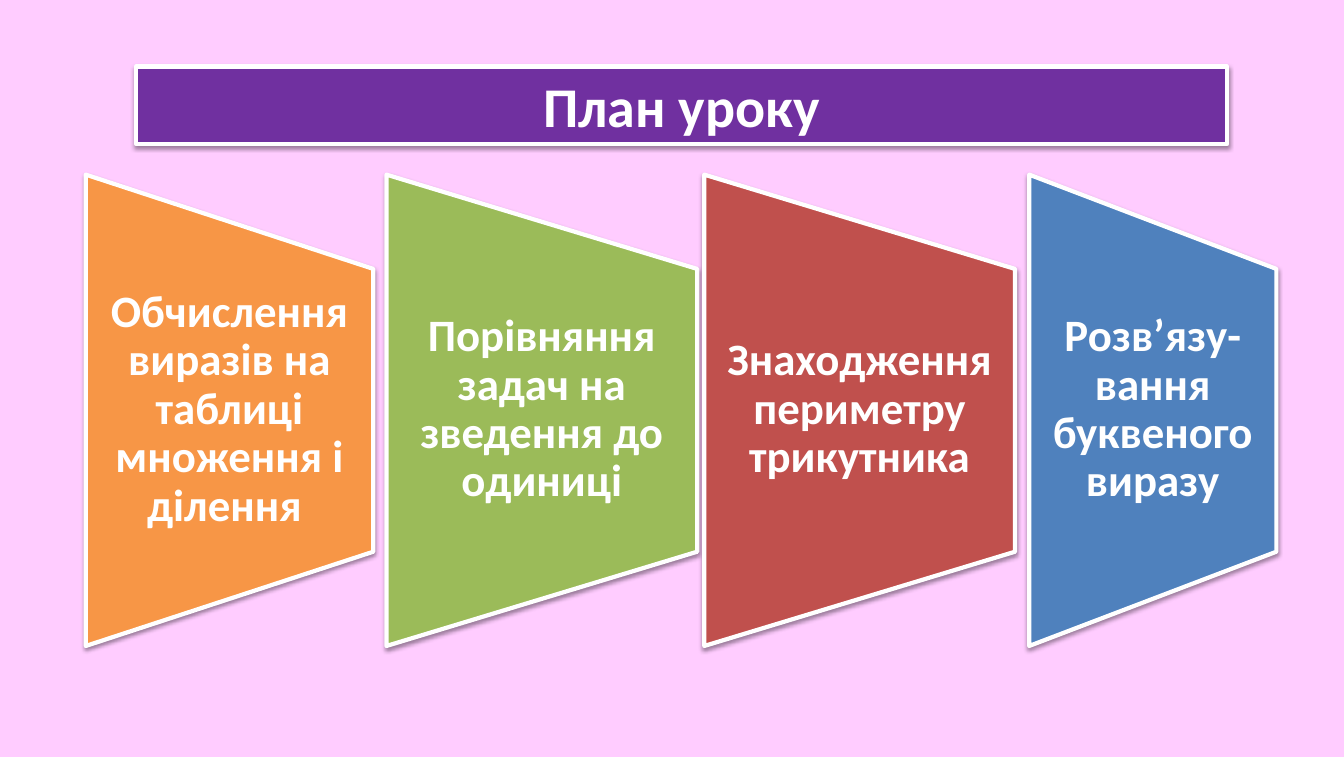
from lxml import etree
from pptx import Presentation
from pptx.dml.color import RGBColor
from pptx.enum.shapes import MSO_SHAPE
from pptx.enum.text import MSO_ANCHOR, PP_ALIGN
from pptx.oxml.ns import qn
from pptx.util import Inches, Pt

TRAPEZOID = MSO_SHAPE.FLOWCHART_MANUAL_OPERATION
MIDDLE = MSO_ANCHOR.MIDDLE
CENTER = PP_ALIGN.CENTER

COLORS = {
    "background": "FFCCFF",
    "title": "7030A0",
    "orange": "F79646",
    "green": "9BBB59",
    "red": "C0504D",
    "blue": "4F81BD",
    "white": "FFFFFF",
    "shadow": "000000",
}
FONT = "Calibri"
STEP_TOP, STEP_HEIGHT = 1.73, 4.67
TEXT_TOP, TEXT_HEIGHT = 2.66, 2.8

# Left edge, width, colour and wording of each lesson step
STEPS = [
    (0.85, 2.85, "orange", "Обчислення виразів на таблиці множення і ділення "),
    (3.83, 3.08, "green", "Порівняння задач на зведення до одиниці"),
    (6.98, 3.08, "red", "Знаходження периметру трикутника"),
    (10.2, 2.45, "blue", "Розв’язу-вання буквеного виразу"),
]


def rgb(name):
    return RGBColor.from_string(COLORS[name])


def write(tf, text, size=32, color="white", bold=True, spacing=1.0):
    tf.word_wrap = True
    tf.vertical_anchor = MIDDLE
    p = tf.paragraphs[0]
    p.alignment = CENTER
    p.line_spacing = spacing
    r = p.add_run()
    r.text = text
    r.font.name = FONT
    r.font.size = Pt(size)
    r.font.bold = bold
    r.font.color.rgb = rgb(color)


class LessonSlide:
    def __init__(self, prs):
        self.s = prs.slides.add_slide(prs.slide_layouts[5])
        fill = self.s.background.fill
        fill.solid()
        fill.fore_color.rgb = rgb("background")

    def style(self, sp, color):
        """Solid fill, white outline and a soft shadow below."""
        sp.fill.solid()
        sp.fill.fore_color.rgb = rgb(color)
        sp.line.color.rgb = rgb("white")
        sp.line.width = Pt(3)
        sp.shadow.inherit = False
        effects = sp.element.spPr.find(qn("a:effectLst"))
        shadow = etree.SubElement(
            effects, qn("a:outerShdw"), blurRad=str(Pt(3.1)),
            dist=str(Pt(1.6)), dir="5400000", rotWithShape="0")
        clr = etree.SubElement(shadow, qn("a:srgbClr"), val=COLORS["shadow"])
        etree.SubElement(clr, qn("a:alpha"), val="38000")

    def title(self, text, x, y, w, h):
        sp = self.s.shapes.title
        sp.left, sp.top, sp.width, sp.height = map(Inches, (x, y, w, h))
        self.style(sp, "title")
        write(sp.text_frame, text, size=40)

    def trapezoid(self, x, y, w, h, color):
        # Turned a quarter, so width and height swap around the same centre
        sp = self.s.shapes.add_shape(
            TRAPEZOID, Inches(x + (w - h) / 2), Inches(y + (h - w) / 2),
            Inches(h), Inches(w))
        sp.rotation = 270
        self.style(sp, color)

    def label(self, text, x, y, w, h):
        sp = self.s.shapes.add_textbox(*map(Inches, (x, y, w, h)))
        tf = sp.text_frame
        tf.margin_left = tf.margin_right = Inches(0.22)
        tf.margin_top = tf.margin_bottom = 0
        write(tf, text, spacing=0.9)


def main():
    prs = Presentation()
    prs.slide_width, prs.slide_height = Inches(13.32), Inches(7.5)
    slide = LessonSlide(prs)

    # Title bar
    slide.title("План уроку", 1.35, 0.66, 10.81, 0.77)

    # Lesson steps
    for x, w, color, text in STEPS:
        slide.trapezoid(x, STEP_TOP, w, STEP_HEIGHT, color)
        slide.label(text, x, TEXT_TOP, w, TEXT_HEIGHT)

    prs.save("out.pptx")


if __name__ == "__main__":
    main()
